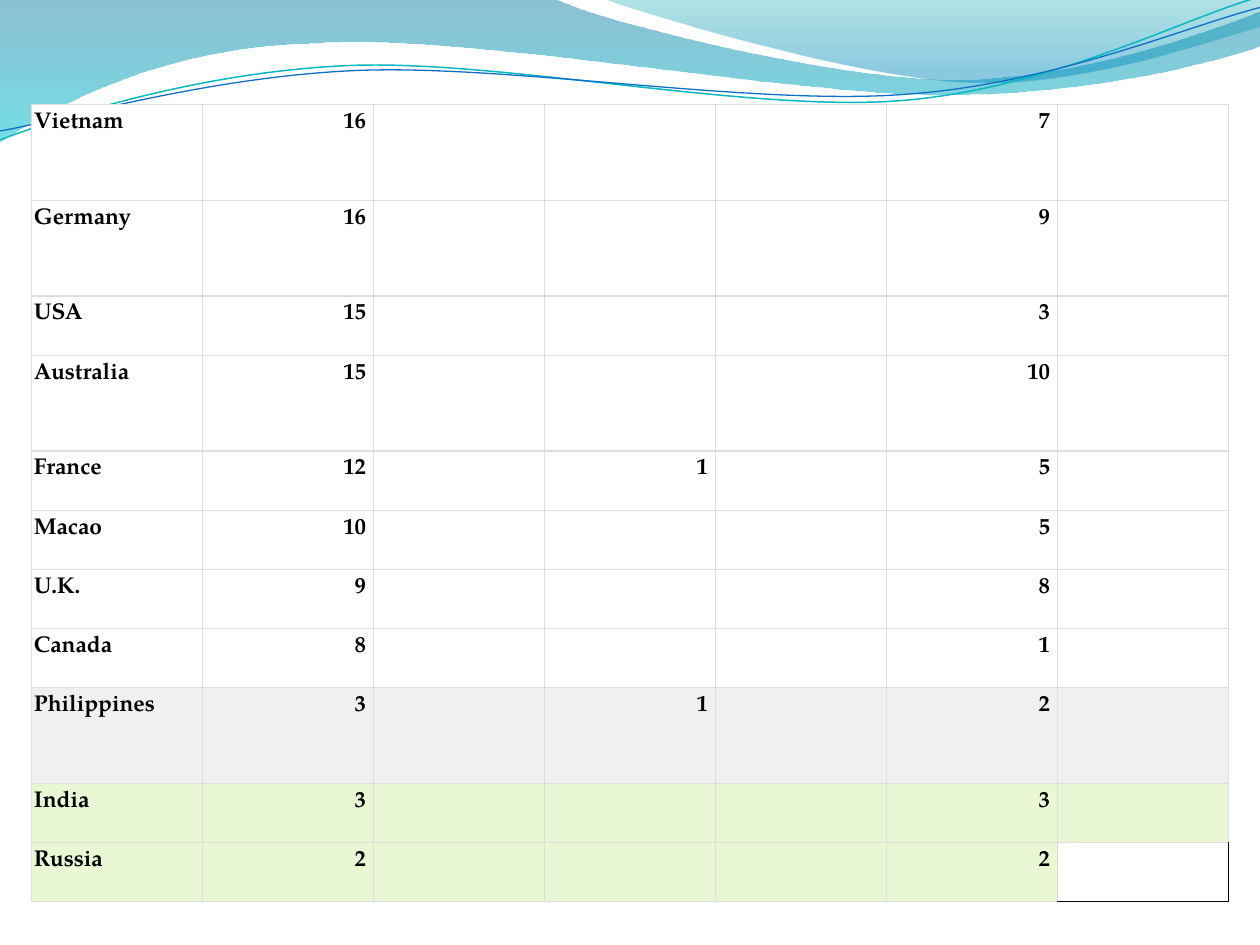
from math import cos, radians, sin

from lxml.etree import SubElement
from pptx import Presentation
from pptx.dml.color import RGBColor
from pptx.enum.text import PP_ALIGN
from pptx.oxml.ns import qn
from pptx.util import Inches, Pt

THEME = {
    "font": "TeX Gyre Pagella", "size": Pt(13), "text": "000000",
    "grid": "DDDDDD", "edge": "000000", "grid_width": Pt(0.75),
    "white": "FFFFFF", "grey": "F0F0F0", "green": "EAF7D5",
    "teal_line": "0AB8BF", "blue_line": "0F6FC6",
    # gradient stops: position, colour, opacity in percent
    "band": [(0, "0074A1", 45), (1, "00C6CF", 55)],
    "crest": [(0, "00A1A9", 30), (0.8, "008BBF", 45)],
}


def add_wave(shapes, start, segments, close):
    """Draw line (2 numbers) and cubic curve (6 numbers) segments in inches."""
    points = [(seg[i], seg[i + 1]) for seg in segments for i in range(0, len(seg), 2)]
    builder = shapes.build_freeform(Inches(start[0]), Inches(start[1]))
    builder.add_line_segments([(Inches(x), Inches(y)) for x, y in points], close=close)
    wave = builder.convert_to_shape()
    wave.shadow.inherit = False
    # Turn each run of three control points into one curve
    lines = iter(list(wave._element.iter(qn("a:lnTo"))))
    for seg in segments:
        first = next(lines)
        if len(seg) == 6:
            first.tag = qn("a:cubicBezTo")
            for _ in range(2):
                control = next(lines)
                first.append(control[0])
                control.getparent().remove(control)
    return wave


def add_border(cell, side, color):
    line = SubElement(cell._tc.get_or_add_tcPr(), qn(f"a:ln{side}"), w=str(THEME["grid_width"]))
    SubElement(SubElement(line, qn("a:solidFill")), qn("a:srgbClr"), val=color)


prs = Presentation()
prs.slide_width, prs.slide_height = Inches(10), Inches(7.5)
slide = prs.slides.add_slide(prs.slide_layouts[6])

# Filled waves along the top
filled_waves = [
    ((0, 0), [(4.4, -0.01), (4.76, 0.17, 6.64, 0.63, 7.58, 0.63),
              (8.53, 0.63, 9.58, 0.26, 10, 0.09), (10.01, 0.36),
              (9.83, 0.44, 8.7, 0.76, 7.46, 0.75), (6.22, 0.75, 3.82, 0.28, 2.57, 0.34),
              (1.29, 0.36, 0.46, 0.83, -0.01, 1.13), (0, 0)], "band"),
    ((4.79, -0.01), [(5.09, 0.11, 6.82, 0.62, 7.69, 0.65),
                     (8.56, 0.69, 9.61, 0.32, 10, 0.21), (10, 0), (4.79, -0.01)], "crest"),
]
for start, segments, gradient in filled_waves:
    wave = add_wave(slide.shapes, start, segments, True)
    wave.line.fill.background()
    wave.fill.gradient()
    wave.fill.gradient_angle = 270
    for stop, (position, color, _) in zip(wave.fill.gradient_stops, THEME[gradient]):
        stop.position = position
        stop.color.rgb = RGBColor.from_string(color)
    for rgb, (_, _, opacity) in zip(wave._element.spPr.iter(qn("a:srgbClr")), THEME[gradient]):
        SubElement(rgb, qn("a:alpha"), val=str(opacity * 1000))

# Thin wave lines, each laid out level and then tilted about its centre
TILT = 2.7
wave_lines = [
    ((0, 1.11), [(0.48, 0.93, 1.58, 0.57, 2.77, 0.52), (3.95, 0.47, 5.93, 0.89, 7.13, 0.8),
                 (8.33, 0.71, 9.38, 0.15, 9.98, -0.02)], (4.99, 0.58), "teal_line", 0.85),
    ((0, 1.04), [(0.47, 0.96, 1.64, 0.61, 2.83, 0.56), (4.03, 0.51, 5.97, 0.84, 7.17, 0.75),
                 (8.36, 0.67, 9.41, 0.21, 10, 0.06)], (5, 0.59), "blue_line", 0.75),
]
cos_tilt, sin_tilt = cos(radians(TILT)), sin(radians(TILT))
for start, segments, (cx, cy), color, width in wave_lines:
    level = []
    for seg in [start, *segments]:
        level.append([])
        for x, y in zip(seg[::2], seg[1::2]):
            level[-1] += [cx + (x - cx) * cos_tilt - (y - cy) * sin_tilt,
                          cy + (x - cx) * sin_tilt + (y - cy) * cos_tilt]
    wave = add_wave(slide.shapes, level[0], level[1:], False)
    wave.rotation = 360 - TILT
    wave.fill.background()
    wave.line.color.rgb = RGBColor.from_string(THEME[color])
    wave.line.width = Pt(width)

# Country table: values of columns 1, 2, 4 and 6, row height, fill
TALL, SHORT = 0.76, 0.47
countries = [
    ("Vietnam", "16", "", "7", TALL, "white"),
    ("Germany", "16", "", "9", TALL, "white"),
    ("USA", "15", "", "3", SHORT, "white"),
    ("Australia", "15", "", "10", TALL, "white"),
    ("France", "12", "1", "5", SHORT, "white"),
    ("Macao", "10", "", "5", SHORT, "white"),
    ("U.K.", "9", "", "8", SHORT, "white"),
    ("Canada", "8", "", "1", SHORT, "white"),
    ("Philippines", "3", "1", "2", TALL, "grey"),
    ("India", "3", "", "3", SHORT, "green"),
    ("Russia", "2", "", "2", SHORT, "green"),
]
COLUMNS = 7
table = slide.shapes.add_table(len(countries), COLUMNS, Inches(0.25), Inches(0.83),
                               Inches(9.5), Inches(6.33)).table
table.first_row = table.horz_banding = False
for column in table.columns:
    column.width = Inches(9.5 / COLUMNS)

text_format = {"name": THEME["font"], "size": THEME["size"], "bold": True}
for r, (country, total, fourth, sixth, height, fill) in enumerate(countries):
    table.rows[r].height = Inches(height)
    for c, value in enumerate([country, total, "", fourth, "", sixth, ""]):
        cell = table.cell(r, c)
        is_corner = r == len(countries) - 1 and c == COLUMNS - 1
        margins = {f"margin_{side}": Inches(0.06) for side in ("left", "top", "right", "bottom")}
        if c == 0:
            margins["margin_left"] = Inches(0.02)
        for key, margin in margins.items():
            setattr(cell, key, margin)
        for side in "LRTB":
            add_border(cell, side, THEME["edge" if is_corner and side in "RB" else "grid"])
        if is_corner:
            cell.fill.background()
        else:
            cell.fill.solid()
            cell.fill.fore_color.rgb = RGBColor.from_string(THEME[fill])
        if value:
            paragraph = cell.text_frame.paragraphs[0]
            paragraph.alignment = PP_ALIGN.RIGHT if c else PP_ALIGN.LEFT
            run = paragraph.add_run()
            run.text = value
            for key, setting in text_format.items():
                setattr(run.font, key, setting)
            run.font.color.rgb = RGBColor.from_string(THEME["text"])

prs.save("out.pptx")
